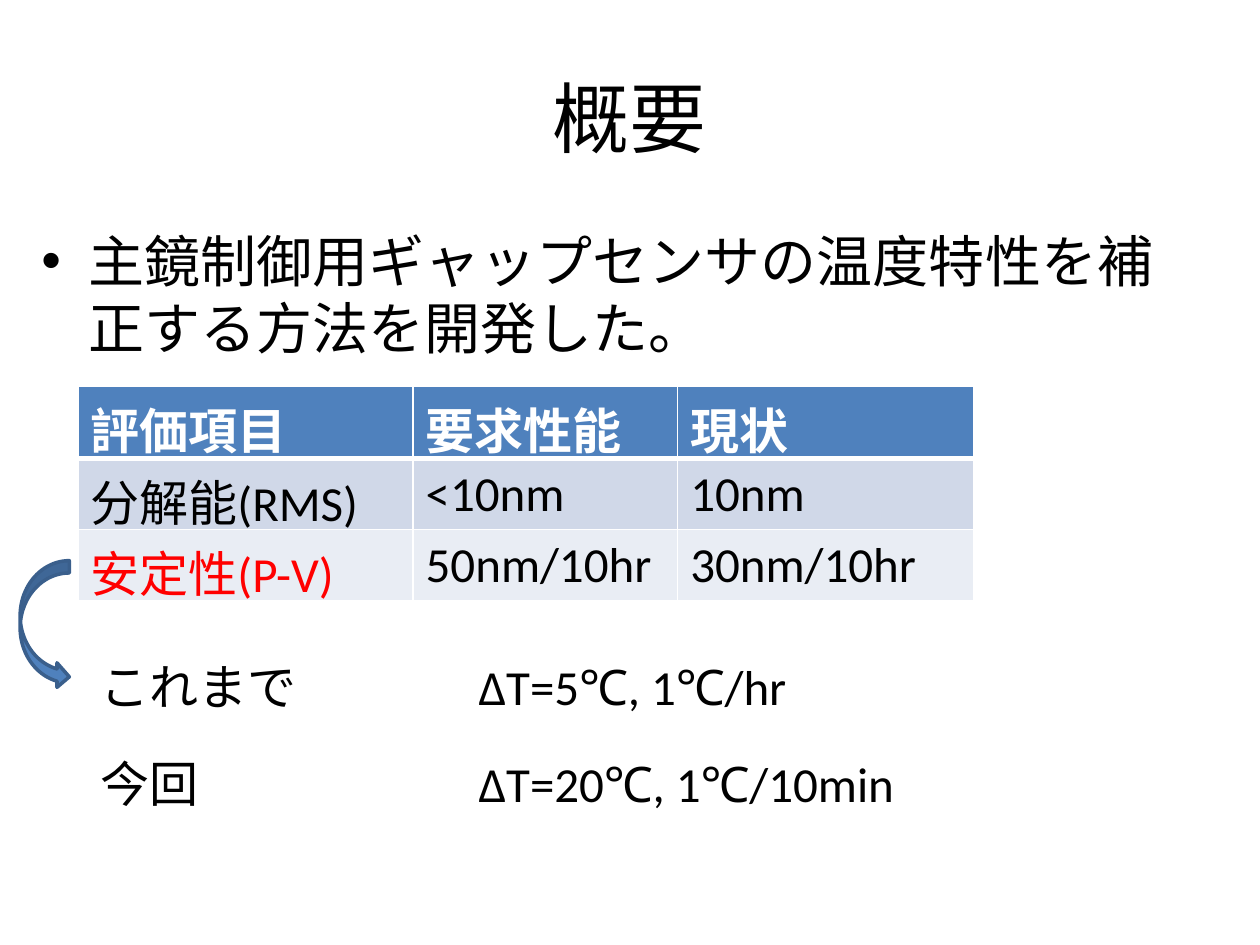
from lxml.etree import SubElement
from pptx import Presentation
from pptx.dml.color import RGBColor
from pptx.enum.shapes import MSO_SHAPE
from pptx.enum.text import MSO_ANCHOR, PP_ALIGN
from pptx.oxml.ns import qn
from pptx.util import Pt

FONT = "Calibri"
ROWS = [
    ["評価項目", "要求性能", "現状"],
    ["分解能(RMS)", "<10nm", "10nm"],
    ["安定性(P-V)", "50nm/10hr", "30nm/10hr"],
]
ROW_FILLS = ["4F81BD", "D0D8E8", "E9EDF4"]
COLUMN_WIDTHS = [191.5, 151.2, 169.2]
CONDITIONS = ["これまで\tΔT=5℃, 1℃/hr", "今回\tΔT=20℃, 1℃/10min"]


def color(hex_string):
    """Turn a hex string into a colour."""
    return RGBColor.from_string(hex_string)


def write(paragraph, text, size=28, fill="000000", bold=False,
          align=PP_ALIGN.LEFT, before=0):
    """Put formatted text into a paragraph."""
    paragraph.alignment = align
    paragraph.space_before = Pt(before)
    run = paragraph.add_run()
    run.text = text
    run.font.name = FONT
    run.font.size = Pt(size)
    run.font.bold = bold
    run.font.color.rgb = color(fill)


def add_frame(slide, left, top, width, height, anchor=MSO_ANCHOR.TOP):
    """Add a wrapping text box and return its text frame."""
    shape = slide.shapes.add_textbox(Pt(left), Pt(top), Pt(width), Pt(height))
    frame = shape.text_frame
    frame.word_wrap = True
    frame.vertical_anchor = anchor
    return frame


def add_title(slide, left, top, width, height):
    """Add the centred heading."""
    frame = add_frame(slide, left, top, width, height, MSO_ANCHOR.MIDDLE)
    write(frame.paragraphs[0], "概要", size=44, align=PP_ALIGN.CENTER)


def add_summary(slide, left, top, width, height):
    """Add the bulleted summary with a hanging indent."""
    paragraph = add_frame(slide, left, top, width, height).paragraphs[0]
    write(paragraph, "主鏡制御用ギャップセンサの温度特性を補正する方法を開発した。",
          size=32, before=6.4)
    properties = paragraph._p.get_or_add_pPr()
    properties.set("marL", str(Pt(27)))
    properties.set("indent", str(-Pt(27)))
    SubElement(properties, qn("a:buFont"), typeface="Arial")
    SubElement(properties, qn("a:buChar"), char="•")


def set_borders(cell, **widths):
    """Draw white cell borders of the given widths."""
    properties = cell._tc.get_or_add_tcPr()
    for index, (side, width) in enumerate(widths.items()):
        line = SubElement(properties, qn(f"a:ln{side}"), w=str(Pt(width)))
        fill = SubElement(line, qn("a:solidFill"))
        SubElement(fill, qn("a:srgbClr"), val="FFFFFF")
        properties.remove(line)
        properties.insert(index, line)


def add_performance_table(slide, left, top, width, height):
    """Add the table of required and present performance."""
    table = slide.shapes.add_table(len(ROWS), len(COLUMN_WIDTHS), Pt(left),
                                   Pt(top), Pt(width), Pt(height)).table
    for column, column_width in zip(table.columns, COLUMN_WIDTHS):
        column.width = Pt(column_width)
    for row_index, texts in enumerate(ROWS):
        table.rows[row_index].height = Pt(height / len(ROWS))
        header = row_index == 0
        for column_index, text in enumerate(texts):
            cell = table.cell(row_index, column_index)
            cell.fill.solid()
            cell.fill.fore_color.rgb = color(ROW_FILLS[row_index])
            set_borders(cell, L=1, R=1, T=3 if row_index == 1 else 1,
                        B=3 if header else 1)
            highlighted = row_index == 2 and column_index == 0
            text_color = "FFFFFF" if header else "FF0000" if highlighted else "000000"
            write(cell.text_frame.paragraphs[0], text, fill=text_color, bold=header)


def add_conditions(slide, left, top, width, height):
    """Add the test conditions, aligned at one tab stop."""
    frame = add_frame(slide, left, top, width, height)
    for index, text in enumerate(CONDITIONS):
        paragraph = frame.add_paragraph() if index else frame.paragraphs[0]
        write(paragraph, text, before=22 * index)
        tabs = SubElement(paragraph._p.get_or_add_pPr(), qn("a:tabLst"))
        SubElement(tabs, qn("a:tab"), pos=str(Pt(216)), algn="l")


def add_curved_arrow(slide, left, top, width, height):
    """Add the arrow from the stability row to the conditions."""
    shape = slide.shapes.add_shape(MSO_SHAPE.CURVED_RIGHT_ARROW, Pt(left),
                                   Pt(top), Pt(width), Pt(height))
    shape.shadow.inherit = False
    shape.fill.solid()
    shape.fill.fore_color.rgb = color("4F81BD")
    shape.line.color.rgb = color("3A5F8C")
    shape.line.width = Pt(2)


def main():
    """Build and save the slide."""
    presentation = Presentation()
    presentation.slide_width = Pt(720)
    presentation.slide_height = Pt(540)
    slide = presentation.slides.add_slide(presentation.slide_layouts[6])
    add_title(slide, 36, 21.6, 648, 90)
    add_summary(slide, 16.6, 126, 667.4, 93.6)
    add_conditions(slide, 50.4, 371.5, 528.5, 97.2)
    add_performance_table(slide, 44.6, 221, sum(COLUMN_WIDTHS), 122.4)
    add_curved_arrow(slide, 11.5, 320.4, 28.1, 73.4)
    presentation.save("out.pptx")


if __name__ == "__main__":
    main()
